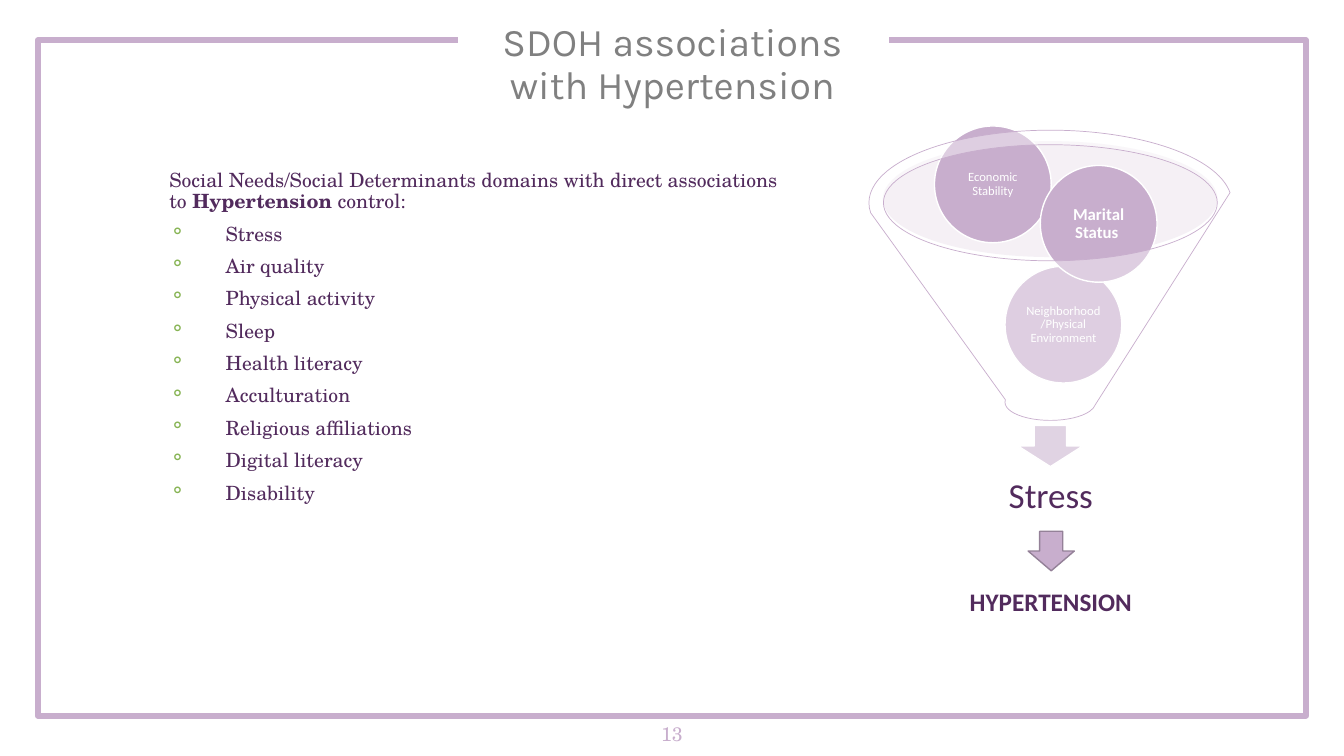
from dataclasses import dataclass
from typing import Optional

from lxml.etree import SubElement
from pptx import Presentation
from pptx.dml.color import RGBColor
from pptx.enum.shapes import MSO_SHAPE as Preset
from pptx.enum.text import MSO_ANCHOR as Anchor, PP_ALIGN as Align
from pptx.oxml.ns import qn
from pptx.util import Inches, Pt

COLUMNS, ROWS, CELLS_PER_INCH = 160, 90, 12

LILAC, PLUM, GREY, WHITE, GREEN = "C8AECD", "522B5D", "808080", "FFFFFF", "87B454"
SERIF, SANS, HEADING = "TeX Gyre Schola", "Calibri", "Karla"


@dataclass
class Area:
    """Left, top, width and height in grid columns and rows."""
    left: float
    top: float
    width: float
    height: float


@dataclass
class Style:
    font: str
    size: float
    color: str
    bold: bool = False
    spacing: float = 0.9


@dataclass
class Label:
    text: str
    area: Area
    style: Style
    inset: float = 0.1
    anchor: Anchor = Anchor.MIDDLE


@dataclass
class Figure:
    preset: Preset
    area: Area
    fill: str
    line: Optional[str] = None
    weight: float = 1
    opacity: int = 100
    text: str = ""
    style: Optional[Style] = None


BODY = Style(SERIF, 14, PLUM)
SMALL = Style(SANS, 9, WHITE)
STRONG = Style(SANS, 12, WHITE, bold=True)
BALL = 13.9

FIGURES = [
    Figure(Preset.OVAL, Area(105.1, 16.8, 39.85, 13.8), "E6DBE8", opacity=40),
    Figure(Preset.DOWN_ARROW, Area(121.2, 50.65, 7.7, 4.9), "E0D3E3", WHITE),
    Figure(Preset.OVAL, Area(119.65, 31.7, BALL, BALL), LILAC, WHITE,
           text="Neighborhood /Physical Environment", style=SMALL),
    Figure(Preset.OVAL, Area(111.25, 15, BALL, BALL), LILAC, WHITE,
           text="Economic Stability", style=SMALL),
    Figure(Preset.OVAL, Area(123.85, 19.7, BALL, BALL), LILAC, WHITE,
           text="Marital Status ", style=STRONG),
    Figure(Preset.FUNNEL, Area(103.45, 15.5, 43.2, 34.55), WHITE, LILAC, 0.5, 40),
    Figure(Preset.DOWN_ARROW, Area(122.4, 63.25, 5.5, 4.7), LILAC, "948198"),
]
LABELS = [
    Label("13", Area(0, 80.4, COLUMNS, 14), Style(SERIF, 14, LILAC, spacing=1)),
    Label("SDOH associations with Hypertension", Area(56.75, 1.55, 46.55, 12.85),
          Style(HEADING, 28, GREY), anchor=Anchor.TOP),
    Label("Stress", Area(106.55, 54.6, 37.1, 9.25), Style(SANS, 25, PLUM), 0.19),
    Label("HYPERTENSION", Area(108.6, 69.25, 33, 4.8),
          Style(SANS, 18, PLUM, bold=True, spacing=1), 0.05),
]
INTRO = [
    ("Social Needs/Social Determinants domains with direct associations to ", False),
    ("Hypertension", True),
    (" control:", False),
]
DOMAINS = ["Stress", "Air quality", "Physical activity", "Sleep", "Health literacy",
           "Acculturation", "Religious affiliations", "Digital literacy", "Disability"]
BODY_AREA = Area(17.65, 19.1, 78.25, 53.75)
FRAME = [(54.5, 4.8), (4.5, 4.8), (4.5, 85.2), (155.45, 85.2), (155.45, 4.8), (105.8, 4.8)]


def grid(cells: float) -> int:
    return Inches(cells / CELLS_PER_INCH)


def place(area: Area) -> tuple:
    return grid(area.left), grid(area.top), grid(area.width), grid(area.height)


def paint(target, color: str) -> None:
    """Give a fill a solid colour."""
    target.solid()
    target.fore_color.rgb = RGBColor.from_string(color)


def style_paragraph(para, style: Style) -> None:
    para.line_spacing = style.spacing
    font = para.font
    font.name, font.size, font.bold = style.font, Pt(style.size), style.bold
    font.color.rgb = RGBColor.from_string(style.color)


def prepare_frame(frame, inset: float, anchor: Anchor) -> None:
    frame.word_wrap = True
    frame.vertical_anchor = anchor
    frame.margin_left = frame.margin_right = Inches(inset)
    frame.margin_top = frame.margin_bottom = Inches(inset)


def write_centred(frame, text: str, style: Style, inset: float, anchor: Anchor) -> None:
    prepare_frame(frame, inset, anchor)
    para = frame.paragraphs[0]
    para.text = text
    para.alignment = Align.CENTER
    style_paragraph(para, style)


def draw_frame(page) -> None:
    """Draw the border that leaves a gap for the title."""
    points = [(grid(column), grid(row)) for column, row in FRAME]
    builder = page.shapes.build_freeform(*points[0])
    builder.add_line_segments(points[1:], close=False)
    border = builder.convert_to_shape()
    border.shadow.inherit = False
    border.fill.background()
    border.line.width = Pt(4.25)
    paint(border.line.fill, LILAC)


def draw_figure(page, figure: Figure) -> None:
    shape = page.shapes.add_shape(figure.preset, *place(figure.area))
    shape.shadow.inherit = False
    paint(shape.fill, figure.fill)
    if figure.opacity < 100:
        color = shape.fill._xPr.find(qn("a:solidFill"))[0]
        SubElement(color, qn("a:alpha"), val=str(figure.opacity * 1000))
    if figure.line:
        paint(shape.line.fill, figure.line)
        shape.line.width = Pt(figure.weight)
    else:
        shape.line.fill.background()
    if figure.style:
        write_centred(shape.text_frame, figure.text, figure.style, 0.01, Anchor.MIDDLE)


def draw_label(page, label: Label) -> None:
    box = page.shapes.add_textbox(*place(label.area))
    write_centred(box.text_frame, label.text, label.style, label.inset, label.anchor)


def indent(para, margin: float, first: float, bullet: str = "") -> None:
    """Set margin and first-line indent in inches, and a bullet if given."""
    properties = para._p.get_or_add_pPr()
    properties.set("marL", str(Inches(margin)))
    properties.set("indent", str(Inches(first)))
    if bullet:
        color = SubElement(properties, qn("a:buClr"))
        SubElement(color, qn("a:srgbClr"), val=GREEN)
        SubElement(properties, qn("a:buChar"), char=bullet)


def draw_body(page) -> None:
    frame = page.shapes.add_textbox(*place(BODY_AREA)).text_frame
    prepare_frame(frame, 0.1, Anchor.TOP)
    intro = frame.paragraphs[0]
    for text, bold in INTRO:
        span = intro.add_run()
        span.text = text
        span.font.bold = bold
    indent(intro, 0.11, 0)
    for domain in DOMAINS:
        para = frame.add_paragraph()
        para.text = domain
        indent(para, 0.67, -0.56, "⚬")
    for para in frame.paragraphs:
        para.space_before = Pt(8)
        style_paragraph(para, BODY)


def main() -> None:
    deck = Presentation()
    deck.slide_width, deck.slide_height = grid(COLUMNS), grid(ROWS)
    page = deck.slides.add_slide(deck.slide_layouts[6])
    draw_frame(page)
    for figure in FIGURES:
        draw_figure(page, figure)
    for label in LABELS:
        draw_label(page, label)
    draw_body(page)
    deck.save("out.pptx")


if __name__ == "__main__":
    main()
